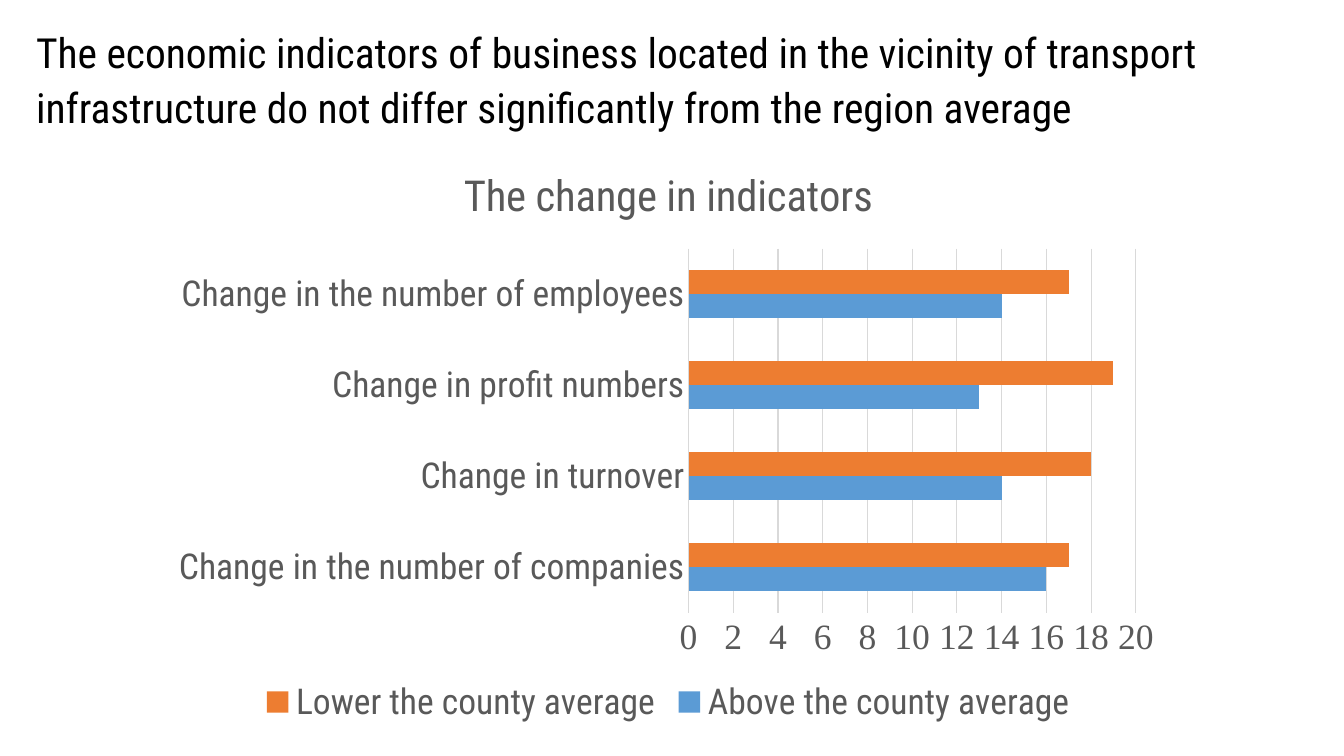
from lxml import etree
from pptx import Presentation
from pptx.chart.data import CategoryChartData
from pptx.dml.color import RGBColor
from pptx.enum.chart import XL_CHART_TYPE as ChartType
from pptx.enum.chart import XL_LEGEND_POSITION as LegendPosition
from pptx.enum.chart import XL_TICK_MARK as TickMark
from pptx.oxml.ns import qn
from pptx.util import Inches, Pt

BLACK = RGBColor(0x00, 0x00, 0x00)
GRAY = RGBColor(0x59, 0x59, 0x59)
LIGHT_GRAY = RGBColor(0xD9, 0xD9, 0xD9)
BLUE = RGBColor(0x5B, 0x9B, 0xD5)
ORANGE = RGBColor(0xED, 0x7D, 0x31)

SANS = "Roboto Condensed"
SERIF = "Times New Roman"

HEADING = ("The economic indicators of business located in the vicinity of transport "
           "infrastructure do not differ significantly from the region average")
CATEGORIES = ["Change in the number of companies", "Change in turnover",
              "Change in profit numbers", "Change in the number of employees"]
SERIES = [("Above the county average", [16, 14, 13, 14], BLUE),
          ("Lower the county average", [17, 18, 19, 17], ORANGE)]


def format_font(font, name=SANS, size=24, color=GRAY):
    font.name = name
    font.size = Pt(size)
    font.bold = False
    font.color.rgb = color


def write_text(text_frame, text, line_spacing=None, space_after=None, **font_format):
    paragraph = text_frame.paragraphs[0]
    paragraph.line_spacing = line_spacing
    if space_after is not None:
        paragraph.space_after = Pt(space_after)
    run = paragraph.add_run()
    run.text = text
    format_font(run.font, **font_format)


def add_heading(slide):
    box = slide.shapes.add_textbox(Inches(0.24), Inches(0.16), Inches(12.05), Inches(1.2))
    box.text_frame.word_wrap = True
    write_text(box.text_frame, HEADING, line_spacing=1.1, space_after=8,
               size=28, color=BLACK)


def format_line(line):
    line.color.rgb = LIGHT_GRAY
    line.width = Pt(0.75)


def format_axes(chart):
    category_axis, value_axis = chart.category_axis, chart.value_axis
    for axis, font_name in ((category_axis, SANS), (value_axis, SERIF)):
        axis.major_tick_mark = axis.minor_tick_mark = TickMark.NONE
        format_font(axis.tick_labels.font, name=font_name)
    format_line(category_axis.format.line)
    value_axis.format.line.fill.background()
    value_axis.minimum_scale, value_axis.maximum_scale = 0, 20
    value_axis.major_unit = 2
    format_line(value_axis.major_gridlines.format.line)


def place_plot_area(chart, **fractions):
    """Fix the inner plot area by x, y, w and h as fractions of the chart."""
    plot_area = chart.plots[0]._element.getparent()
    layout = plot_area.find(qn("c:layout"))
    if layout is None:
        layout = etree.Element(qn("c:layout"))
        plot_area.insert(0, layout)
    manual = etree.SubElement(layout, qn("c:manualLayout"))
    settings = {"layoutTarget": "inner", "xMode": "edge", "yMode": "edge", **fractions}
    for tag, value in settings.items():
        etree.SubElement(manual, qn(f"c:{tag}")).set("val", str(value))


def add_indicator_chart(slide):
    data = CategoryChartData()
    data.categories = CATEGORIES
    for name, values, _ in SERIES:
        data.add_series(name, values)
    chart = slide.shapes.add_chart(ChartType.BAR_CLUSTERED, Inches(1.5), Inches(1.34),
                                   Inches(9.53), Inches(5.51), data).chart
    format_font(chart.font, name=SERIF, color=BLACK)
    chart.has_title = True
    write_text(chart.chart_title.text_frame, "The change in indicators", size=28.8)
    chart.chart_title.include_in_layout = False

    plot = chart.plots[0]
    plot.gap_width = 182
    plot.overlap = 0
    plot.vary_by_categories = False
    for series, (_, _, color) in zip(plot.series, SERIES):
        series.format.fill.solid()
        series.format.fill.fore_color.rgb = color

    format_axes(chart)
    place_plot_area(chart, x=0.52, y=0.18, w=0.44, h=0.62)
    chart.has_legend = True
    chart.legend.position = LegendPosition.BOTTOM
    chart.legend.include_in_layout = False
    format_font(chart.legend.font)


def main():
    presentation = Presentation()
    presentation.slide_width = Inches(12.6)
    presentation.slide_height = Inches(7.09)
    slide = presentation.slides.add_slide(presentation.slide_layouts[6])
    add_heading(slide)
    add_indicator_chart(slide)
    presentation.save("out.pptx")


if __name__ == "__main__":
    main()
